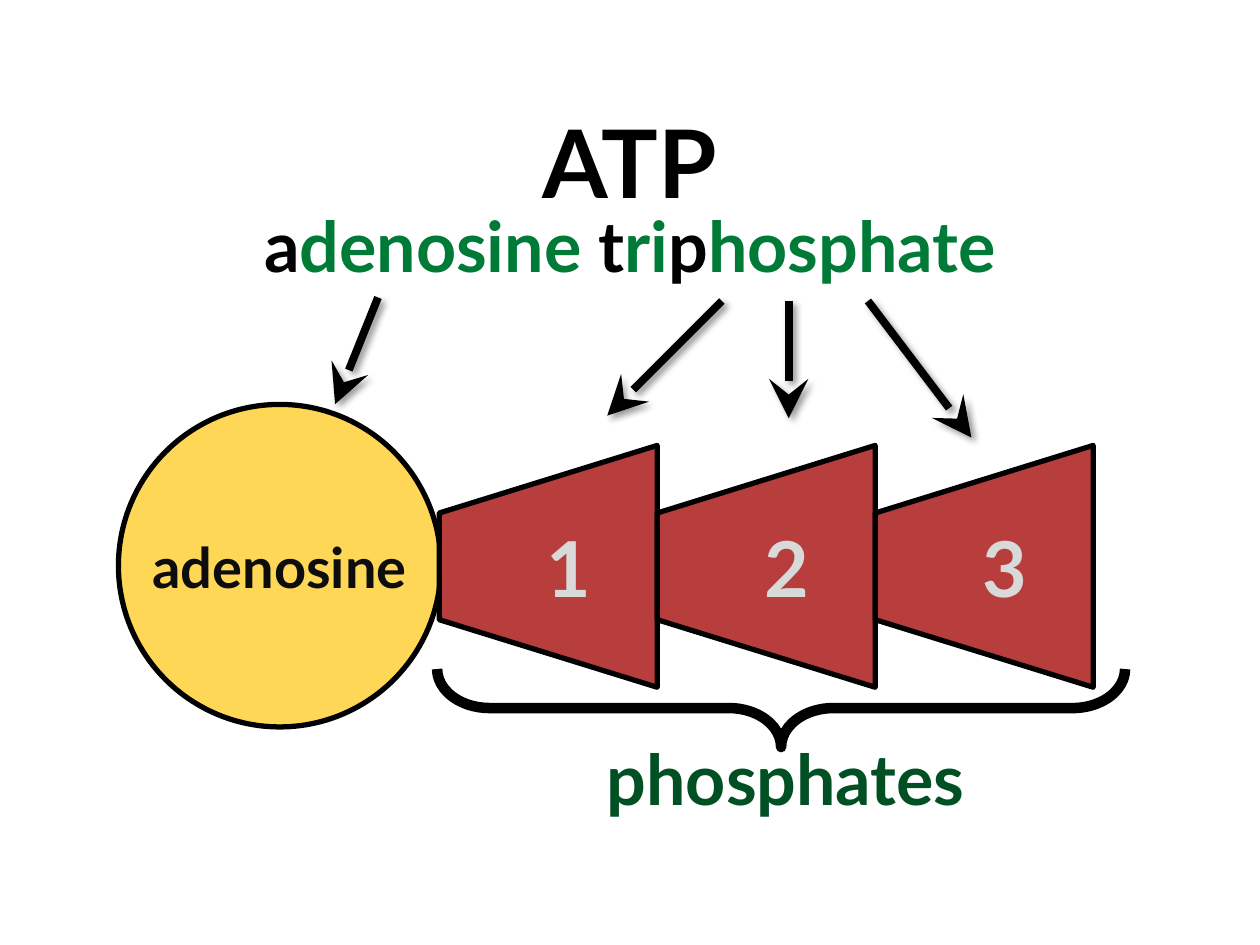
from pptx import Presentation
from pptx.dml.color import RGBColor
from pptx.enum.shapes import MSO_CONNECTOR as Conn, MSO_SHAPE as Form
from pptx.enum.text import MSO_ANCHOR as Anchor, MSO_AUTO_SIZE as Auto, PP_ALIGN as Align
from pptx.oxml import parse_xml
from pptx.oxml.ns import nsdecls
from pptx.util import Pt

FONT = "Lato"
HEX = {
    "black": "000000", "ink": "0D0D0D", "green": "007A37", "dark": "005024",
    "gold": "FFD757", "red": "B83E3E", "pale": "D9D9D9",
}


def color(name):
    return RGBColor.from_string(HEX[name])


def place(shape, box):
    shape.left, shape.top, shape.width, shape.height = map(Pt, box)


def write(shape, parts, size, wrap=False, anchor=Anchor.TOP, space=None):
    """Set one centred line from (text, colour) parts."""
    frame = shape.text_frame
    frame.auto_size = Auto.NONE
    frame.word_wrap = wrap
    frame.vertical_anchor = anchor
    para = frame.paragraphs[0]
    para.alignment = Align.CENTER
    para.space_before = Pt(0)
    if space:
        para.line_spacing = space
    for text, tint in parts:
        run = para.add_run()
        run.text = text
        font = run.font
        font.name, font.size, font.bold = FONT, Pt(size), True
        font.color.rgb = color(tint)


def draw(shapes, form, box, fill=None, width=3):
    shape = shapes.add_shape(form, *map(Pt, box))
    shape.shadow.inherit = False
    if fill:
        shape.fill.solid()
        shape.fill.fore_color.rgb = color(fill)
    else:
        shape.fill.background()
    shape.line.color.rgb = color("black")
    shape.line.width = Pt(width)
    return shape


def turn(shapes, form, box, angle, fill=None, width=3):
    """Draw a shape that fills the box after a quarter turn."""
    x, y, w, h = box
    flat = (x + (w - h) / 2, y + (h - w) / 2, h, w)
    shape = draw(shapes, form, flat, fill, width)
    shape.rotation = angle
    return shape


def arrow(shapes, start, end):
    line = shapes.add_connector(Conn.STRAIGHT, *map(Pt, start + end))
    line.line.color.rgb = color("black")
    line.line.width = Pt(4.5)
    line.line._get_or_add_ln().append(parse_xml(
        f'<a:tailEnd {nsdecls("a")} type="stealth" w="lg" len="lg"/>'))
    line._element.spPr.append(parse_xml(
        f'<a:effectLst {nsdecls("a")}>'
        f'<a:outerShdw blurRad="{Pt(4)}" dist="{Pt(3)}" dir="2700000" rotWithShape="0">'
        f'<a:srgbClr val="{HEX["black"]}"><a:alpha val="40000"/></a:srgbClr>'
        '</a:outerShdw></a:effectLst>'))


def heading(slide, box):
    x, y, w, h = box
    title, sub = slide.placeholders
    place(title, (x, y, w, 62.6))
    write(title, [("ATP", "black")], 54, space=0.85)
    place(sub, (x, y + h - 48, w, 48))
    parts = [("a", "black"), ("denosine ", "green"), ("t", "black"),
             ("ri", "green"), ("p", "black"), ("hosphate", "green")]
    write(sub, parts, 40, space=0.85)


def base(slide, box):
    disc = draw(slide.shapes, Form.OVAL, box, "gold")
    write(disc, [("adenosine", "ink")], 32, anchor=Anchor.MIDDLE)


def chain(slide, box, count=3):
    x, y, w, h = box
    step = w / count
    for i in range(count):
        unit = turn(slide.shapes, Form.TRAPEZOID, (x + i * step, y, step, h), 270, "red")
        unit.adjustments[0] = 0.31
        write(unit, [(str(i + 1), "pale")], 44, wrap=True, anchor=Anchor.MIDDLE)
        unit.text_frame._txBody.bodyPr.set("vert", "vert")


def arrows(slide, box):
    """Arrows from the name to the parts, as offsets in the box."""
    x, y, w, h = box
    for x1, y1, x2, y2 in [(24.5, 0, 0, 61), (221, 2, 155.5, 67.5),
                           (259.2, 2, 259.2, 69), (304.5, 2, w, h)]:
        arrow(slide.shapes, (x + x1, y + y1), (x + x2, y + y2))


def bracket(slide, box):
    x, y, w, h = box
    group = slide.shapes.add_group_shape()
    label = group.shapes.add_textbox(*map(Pt, (x + 75, y + h - 48, 248.4, 48)))
    write(label, [("phosphates", "dark")], 40, space=0.85)
    brace = turn(group.shapes, Form.RIGHT_BRACE, (x, y, w, 44.6), 90, width=6)
    brace.adjustments[0] = 0.673
    brace.adjustments[1] = 0.5


def main():
    deck = Presentation()
    deck.slide_width, deck.slide_height = Pt(720), Pt(540)
    slide = deck.slides.add_slide(deck.slide_layouts[0])
    heading(slide, (113, 65.5, 494, 102))
    base(slide, (67.7, 231.1, 184.3, 184.3))
    chain(slide, (251, 254.5, 373.7, 138.2))
    arrows(slide, (191.5, 170, 363.6, 80))
    bracket(slide, (249.8, 382.3, 393.1, 90))
    deck.save("out.pptx")


if __name__ == "__main__":
    main()
